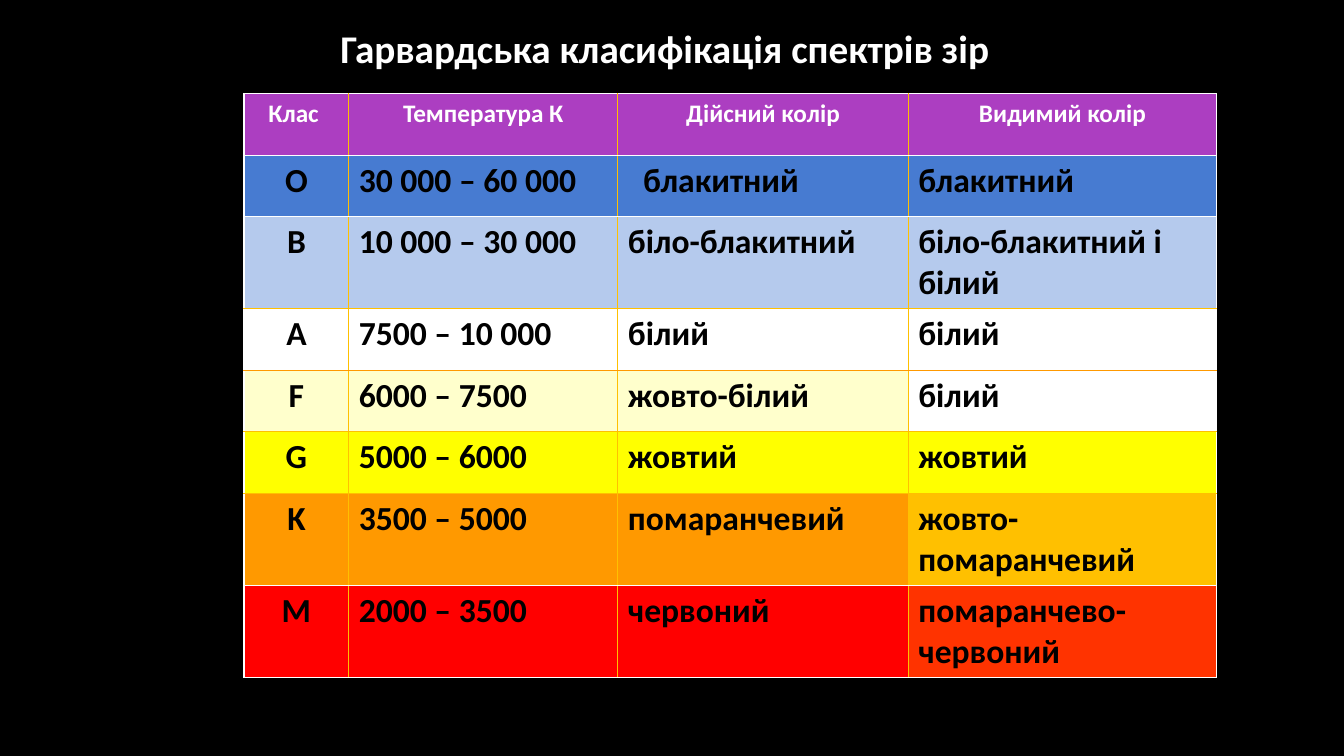
from dataclasses import dataclass

from lxml import etree
from pptx import Presentation
from pptx import util as u
from pptx.dml.color import RGBColor
from pptx.enum import text
from pptx.oxml.ns import qn


@dataclass(frozen=True)
class Theme:
    font: str = "Calibri"
    background: str = "000000"
    light: str = "FFFFFF"
    dark: str = "000000"
    header: str = "AC3EC1"
    gold: str = "FFC000"
    orange: str = "FF9900"
    title_size: int = 28
    header_size: int = 18
    body_size: int = 24


class SlideBuilder:
    def __init__(self, page, theme):
        self.page = page
        self.theme = theme
        fill = page.background.fill
        fill.solid()
        fill.fore_color.rgb = RGBColor.from_string(theme.background)

    def add_words(self, frame, words, size, color, centered=False):
        para = frame.paragraphs[0]
        if centered:
            para.alignment = text.PP_ALIGN.CENTER
        span = para.add_run()
        span.text = words
        formats = {"name": self.theme.font, "size": u.Pt(size), "bold": True}
        for name, value in formats.items():
            setattr(span.font, name, value)
        span.font.color.rgb = RGBColor.from_string(color)
        return para

    def title(self, words, left, top, width, height):
        box = self.page.shapes.add_textbox(*map(u.Cm, (left, top, width, height)))
        frame = box.text_frame
        formats = {"word_wrap": True, "vertical_anchor": text.MSO_ANCHOR.MIDDLE}
        for name, value in formats.items():
            setattr(frame, name, value)
        para = self.add_words(frame, words, self.theme.title_size, self.theme.light, True)
        para.space_after = u.Pt(10)

    def borders(self, cell, colors):
        properties = cell._tc.get_or_add_tcPr()
        for index, (side, color) in enumerate(zip("LRTB", colors)):
            line = etree.Element(qn(f"a:ln{side}"), w=str(u.Pt(1)))
            fill = etree.SubElement(line, qn("a:solidFill"))
            etree.SubElement(fill, qn("a:srgbClr"), val=color)
            properties.insert(index, line)

    def table(self, rows, fills, rules, left, top, widths, row_height):
        theme = self.theme
        frame = self.page.shapes.add_table(
            len(rows), len(widths), u.Cm(left), u.Cm(top),
            u.Cm(sum(widths)), u.Cm(row_height * len(rows)))
        table = frame.table
        table.horz_banding = False
        for column, width in zip(table.columns, widths):
            column.width = u.Cm(width)

        last = len(widths) - 1
        for r, words in enumerate(rows):
            table.rows[r].height = u.Cm(row_height)
            size, color = ((theme.body_size, theme.dark) if r
                           else (theme.header_size, theme.light))
            for c, word in enumerate(words):
                cell = table.cell(r, c)
                self.add_words(cell.text_frame, word, size, color, r == 0 or c == 0)
                cell.fill.solid()
                row_fill, last_fill = fills[r]
                cell.fill.fore_color.rgb = RGBColor.from_string(
                    last_fill if c == last else row_fill)
                self.borders(cell, (
                    theme.gold if c else theme.light,
                    theme.light if c == last else theme.gold,
                    rules[r], rules[r + 1]))
        return table


def main():
    theme = Theme()
    deck = Presentation()
    deck.slide_width, deck.slide_height = u.Cm(33.87), u.Cm(19.05)
    builder = SlideBuilder(deck.slides.add_slide(deck.slide_layouts[6]), theme)

    # Spectral classes
    rows = [
        ("Клас ", "Температура К", "Дійсний колір", "Видимий колір"),
        ("O", "30 000 – 60 000", "блакитний", "блакитний"),
        ("B", "10 000 – 30 000", "біло-блакитний", "біло-блакитний і білий"),
        ("A", "7500 – 10 000", "білий", "білий"),
        ("F", "6000 – 7500", "жовто-білий", "білий"),
        ("G", "5000 – 6000", "жовтий", "жовтий"),
        ("K", "3500 – 5000", "помаранчевий", "жовто-помаранчевий"),
        ("M", "2000 – 3500", "червоний", "помаранчево-червоний"),
    ]
    # Row fill, then the fill of the last column
    fills = [
        (theme.header, theme.header),
        ("477BD1", "477BD1"),
        ("B5CAED", "B5CAED"),
        (theme.light, theme.light),
        ("FFFFCC", theme.light),
        ("FFFF00", "FFFF00"),
        (theme.orange, theme.gold),
        ("FF0000", "FF3300"),
    ]
    # Horizontal rules from top to bottom
    rules = [theme.light] * 3 + [theme.gold, theme.orange]
    rules += [theme.gold] * 2 + [theme.light] * 2
    table = builder.table(rows, fills, rules, 6.15, 2.36,
                          (2.64, 6.78, 7.32, 7.77), 1.55)
    table.cell(1, 2).margin_left = u.Cm(0.64)

    # Heading
    builder.title("Гарвардська класифікація спектрів зір", 5.23, 0.46, 23.04, 1.5)
    deck.save("out.pptx")


if __name__ == "__main__":
    main()
